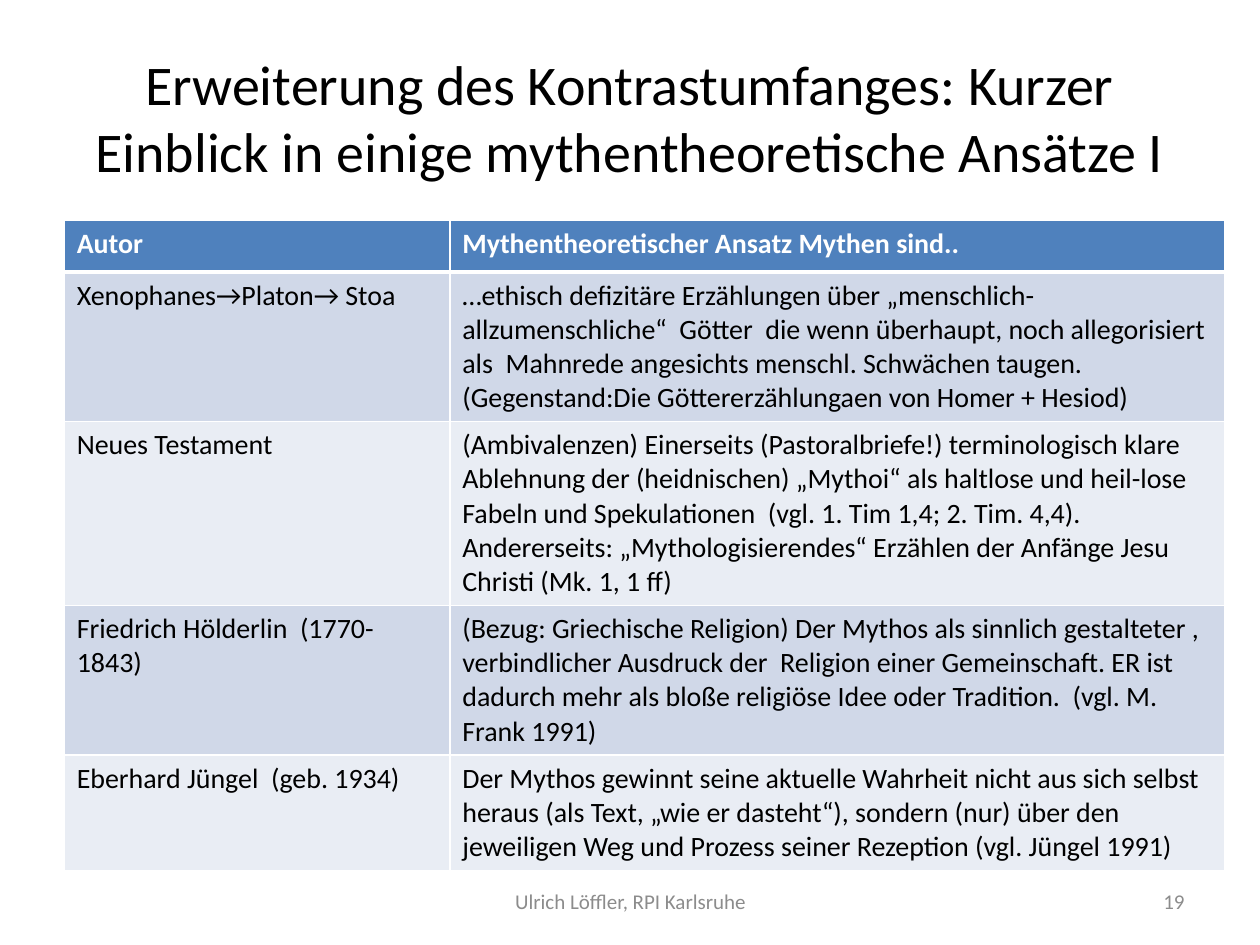
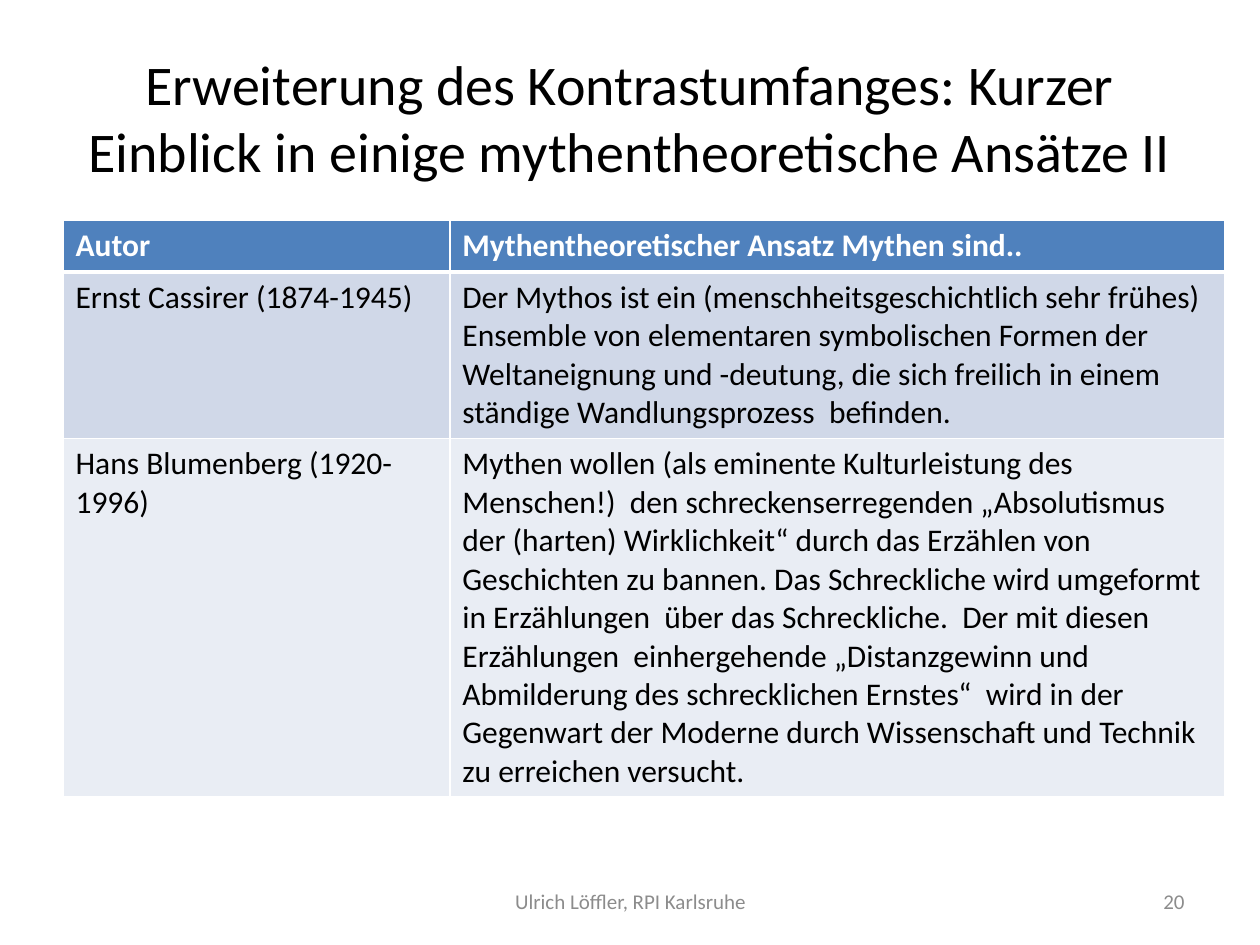
from lxml import etree
from pptx import Presentation
from pptx.dml.color import RGBColor
from pptx.enum.text import MSO_ANCHOR, PP_ALIGN
from pptx.oxml.ns import qn
from pptx.util import Inches, Pt

LEFT, MID, RIGHT = PP_ALIGN.LEFT, PP_ALIGN.CENTER, PP_ALIGN.RIGHT
CENTRE = MSO_ANCHOR.MIDDLE
FONT = "Calibri"
HEX = {"ink": "000000", "white": "FFFFFF", "grey": "8C8C8C",
       "head": "4F81BD", "odd": "D0D8E8", "even": "E9EDF4"}

WIDE, HIGH = Inches(10), Inches(7.5)
EDGE = WIDE * 0.05
TOP = Inches(1.75)
SPLIT, END = Inches(3.57), Inches(9.72)
ROW = Inches(0.41)
FOOT, DEEP = Inches(6.95), Inches(0.4)

TITLE = "Erweiterung des Kontrastumfanges: Kurzer Einblick in einige mythentheoretische Ansätze "
HEADS = ("Autor", "Mythentheoretischer Ansatz Mythen sind..")
AUTHOR = "Ulrich Löffler, RPI Karlsruhe"

# Part, page number, table's left edge in inches, text size, rows
PAGES = [
    ("I", 19, 0.51, 16, [
        ("Xenophanes→Platon→ Stoa",
         "…ethisch defizitäre Erzählungen über „menschlich-allzumenschliche“  Götter  "
         "die wenn überhaupt, noch allegorisiert als  Mahnrede angesichts menschl. "
         "Schwächen taugen. (Gegenstand:Die Göttererzählungaen von Homer + Hesiod)"),
        ("Neues Testament",
         "(Ambivalenzen) Einerseits (Pastoralbriefe!) terminologisch klare Ablehnung der "
         "(heidnischen) „Mythoi“ als haltlose und heil-lose Fabeln und Spekulationen  "
         "(vgl. 1. Tim 1,4; 2. Tim. 4,4). Andererseits: „Mythologisierendes“ Erzählen "
         "der Anfänge Jesu Christi (Mk. 1, 1 ff)"),
        ("Friedrich Hölderlin  (1770-1843)",
         "(Bezug: Griechische Religion) Der Mythos als sinnlich gestalteter , "
         "verbindlicher Ausdruck der  Religion einer Gemeinschaft. ER ist dadurch mehr "
         "als bloße religiöse Idee oder Tradition.  (vgl. M. Frank 1991)"),
        ("Eberhard Jüngel  (geb. 1934)",
         "Der Mythos gewinnt seine aktuelle Wahrheit nicht aus sich selbst heraus (als "
         "Text, „wie er dasteht“), sondern (nur) über den jeweiligen Weg und Prozess "
         "seiner Rezeption (vgl. Jüngel 1991)"),
    ]),
    ("II", 20, 0.5, 18, [
        ("Ernst Cassirer (1874-1945)",
         "Der Mythos ist ein (menschheitsgeschichtlich sehr frühes) Ensemble von "
         "elementaren symbolischen Formen der Weltaneignung und -deutung, die sich "
         "freilich in einem ständige Wandlungsprozess  befinden."),
        ("Hans Blumenberg (1920-1996)",
         "Mythen wollen (als eminente Kulturleistung des Menschen!)  den "
         "schreckenserregenden „Absolutismus der (harten) Wirklichkeit“ durch das "
         "Erzählen von Geschichten zu bannen. Das Schreckliche wird umgeformt in "
         "Erzählungen  über das Schreckliche.  Der mit diesen Erzählungen  "
         "einhergehende „Distanzgewinn und Abmilderung des schrecklichen Ernstes“  wird "
         "in der Gegenwart der Moderne durch Wissenschaft und Technik zu erreichen "
         "versucht."),
    ]),
]


def write(frame, text, size, tint, align=LEFT, bold=False):
    frame.word_wrap = True
    para = frame.paragraphs[0]
    para.alignment = align
    run = para.add_run()
    run.text = text
    run.font.name, run.font.size, run.font.bold = FONT, Pt(size), bold
    run.font.color.rgb = RGBColor.from_string(HEX[tint])


def paint(cell, tint, above, below):
    """Draw white cell borders, then the fill, in schema order."""
    props = cell._tc.get_or_add_tcPr()
    for side, width in (("L", 1), ("R", 1), ("T", above), ("B", below)):
        line = etree.SubElement(props, qn(f"a:ln{side}"), w=str(Pt(width)))
        fill = etree.SubElement(line, qn("a:solidFill"))
        etree.SubElement(fill, qn("a:srgbClr"), val=HEX["white"])
    cell.fill.solid()
    cell.fill.fore_color.rgb = RGBColor.from_string(HEX[tint])


prs = Presentation()
prs.slide_width, prs.slide_height = WIDE, HIGH

for part, page, left, size, rows in PAGES:
    slide = prs.slides.add_slide(prs.slide_layouts[5])
    title = slide.shapes.title
    title.left, title.top = int(EDGE), int(HIGH * 0.04)
    title.width, title.height = int(WIDE * 0.9), Inches(1.25)
    title.text_frame.vertical_anchor = CENTRE
    write(title.text_frame, TITLE + part, 32, "ink", MID)

    start = Inches(left)
    grid = [HEADS] + rows
    table = slide.shapes.add_table(len(grid), 2, start, TOP, END - start,
                                   ROW * len(grid)).table
    table.columns[0].width = SPLIT - start
    table.columns[1].width = END - SPLIT
    for r, texts in enumerate(grid):
        table.rows[r].height = ROW
        head = r == 0
        tint = "head" if head else ("even", "odd")[r % 2]
        for c, text in enumerate(texts):
            cell = table.cell(r, c)
            paint(cell, tint, 3 if r == 1 else 1, 3 if head else 1)
            write(cell.text_frame, text, size, "white" if head else "ink", bold=head)

    for x, width, text, align in ((3.42, 3.17, AUTHOR, MID),
                                  (7.17, 2.33, str(page), RIGHT)):
        box = slide.shapes.add_textbox(Inches(x), FOOT, Inches(width), DEEP)
        box.text_frame.vertical_anchor = CENTRE
        write(box.text_frame, text, 12, "grey", align)

prs.save("out.pptx")
